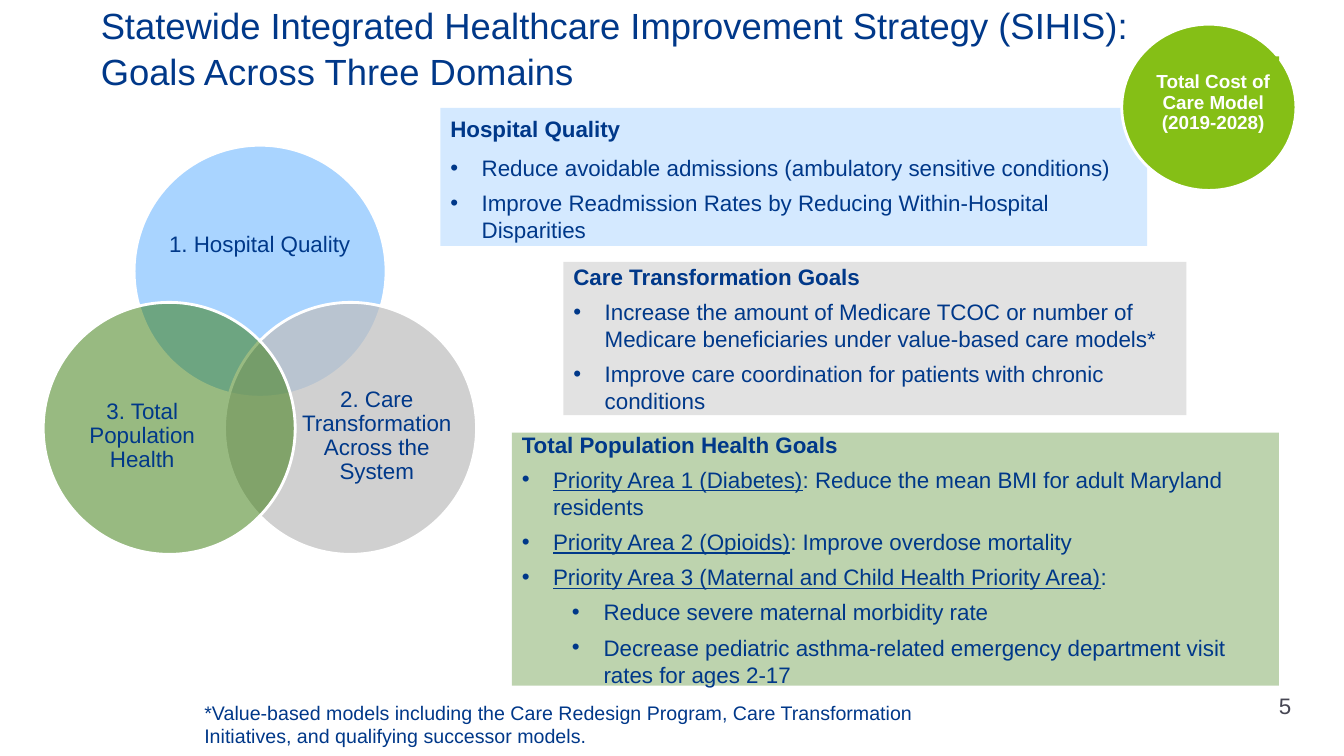
from lxml.etree import SubElement
from pptx import Presentation
from pptx.dml.color import RGBColor
from pptx.enum.shapes import MSO_SHAPE as Shape
from pptx.enum.text import MSO_ANCHOR as Anchor, PP_ALIGN as Align
from pptx.oxml.ns import qn
from pptx.util import Cm, Pt

COLORS = {"navy": "003889", "slate": "464653", "white": "FFFFFF", "blue": "55AAFF",
          "gray": "BFBFBF", "green": "337705", "lime": "85BF16"}

# Boxes are left, top, width, height in centimetres
TITLE = ["Statewide Integrated Healthcare Improvement Strategy (SIHIS):",
         "Goals Across Three Domains"]
TITLE_BOX = (2.29, -0.1, 29.21, 2.36)
FOOTNOTE = ("*Value-based models including the Care Redesign Program, "
            "Care Transformation Initiatives, and qualifying successor models.")
FOOTNOTE_BOX = (4.9, 17.53, 19.33, 1.45)
PAGE_NUMBER, PAGE_NUMBER_BOX = "5", (31.98, 17.27, 1.6, 1.02)
BADGE = "Total Cost of Care Model (2019-2028)"
BADGE_CIRCLE, BADGE_BOX = (28.27, 0.61, 4.39, 4.19), (28.91, 1.42, 3.33, 2.36)

DIAMETER = 6.35
# Label, circle left and top, label box, colour, opacity in percent
DOMAINS = [
    ("1. Hospital Quality", (3.38, 3.66), (4.22, 4.75, 4.65, 2.84), "blue", 50),
    ("2. Care Transformation Across the System", (5.66, 7.62),
     (7.59, 9.25, 3.81, 3.48), "gray", 73),
    ("3. Total Population Health", (1.09, 7.62), (1.68, 9.25, 3.81, 3.48), "green", 50),
]

# Heading, box, colour, opacity, widely spaced lines, goals (level, underlined, plain)
PANELS = [
    ("Hospital Quality", (11.1, 2.72, 17.81, 3.48), "blue", 25, 2, [
        (0, "", "Reduce avoidable admissions (ambulatory sensitive conditions)"),
        (0, "", "Improve Readmission Rates by Reducing Within-Hospital Disparities")]),
    ("Care Transformation Goals", (14.2, 6.6, 15.7, 3.86), "gray", 45, 0, [
        (0, "", "Increase the amount of Medicare TCOC or number of Medicare "
                "beneficiaries under value-based care models*"),
        (0, "", "Improve care coordination for patients with chronic conditions")]),
    ("Total Population Health Goals", (12.9, 10.9, 19.33, 6.38), "green", 32, 0, [
        (0, "Priority Area 1 (Diabetes)",
         ": Reduce the mean BMI for adult Maryland residents"),
        (0, "Priority Area 2 (Opioids)", ": Improve overdose mortality"),
        (0, "Priority Area 3 (Maternal and Child Health Priority Area)", ":"),
        (1, "", "Reduce severe maternal morbidity rate"),
        (1, "", "Decrease pediatric asthma-related emergency department visit "
                "rates for ages 2-17")]),
]
INDENTS, HANGING = (0.79, 2.06), 0.8


def rgb(name):
    return RGBColor.from_string(COLORS[name])


def style(font, size, color="navy", bold=False):
    font.name, font.size, font.bold = "Arial", Pt(size), bold
    font.color.rgb = rgb(color)


def add_filled(slide, kind, box, color, opacity=100, outlined=False):
    shape = slide.shapes.add_shape(kind, *map(Cm, box))
    shape.shadow.inherit = False
    shape.fill.solid()
    shape.fill.fore_color.rgb = rgb(color)
    if opacity < 100:
        color_node = shape.fill._xPr.find(qn("a:solidFill"))[0]
        SubElement(color_node, qn("a:alpha"), val=str(opacity * 1000))
    if outlined:
        shape.line.color.rgb = rgb("white")
        shape.line.width = Pt(2)
    else:
        shape.line.fill.background()
    return shape


def set_frame(frame, anchor=Anchor.TOP, inset=None):
    frame.word_wrap = True
    frame.vertical_anchor = anchor
    if inset is not None:
        frame.margin_left = frame.margin_right = Cm(inset)
        frame.margin_top = frame.margin_bottom = Cm(inset)


def write(frame, lines, size, color="navy", bold=False, align=Align.LEFT, spacing=None):
    frame.text = "\n".join(lines)
    for para in frame.paragraphs:
        para.alignment = align
        para.line_spacing = spacing
        for span in para.runs:
            style(span.font, size, color, bold)


def add_text(slide, box, lines, size, anchor=Anchor.TOP, inset=None, **options):
    frame = slide.shapes.add_textbox(*map(Cm, box)).text_frame
    set_frame(frame, anchor, inset)
    write(frame, lines, size, **options)


def add_bullet(para, level):
    para.level = level
    props = para._p.get_or_add_pPr()
    props.set("marL", str(Cm(INDENTS[level])))
    props.set("indent", str(-Cm(min(HANGING, INDENTS[level]))))
    bullet_color = SubElement(props, qn("a:buClr"))
    SubElement(bullet_color, qn("a:srgbClr"), val=COLORS["navy"])
    SubElement(props, qn("a:buFont"), typeface="Arial")
    SubElement(props, qn("a:buChar"), char="•")


def add_panel(slide, heading, box, color, opacity, wide_lines, goals):
    frame = add_filled(slide, Shape.RECTANGLE, box, color, opacity).text_frame
    set_frame(frame, Anchor.MIDDLE)
    write(frame, [heading], 16, bold=True)
    for level, underlined, plain in goals:
        para = frame.add_paragraph()
        para.alignment = Align.LEFT
        para.space_before = Pt(6)
        add_bullet(para, level)
        for text in filter(None, (underlined, plain)):
            span = para.add_run()
            span.text = text
            style(span.font, 16)
            span.font.underline = text == underlined
    for para in frame.paragraphs[:wide_lines]:
        para.line_spacing = 1.15


def main():
    deck = Presentation()
    deck.slide_width, deck.slide_height = Cm(33.87), Cm(19.05)
    slide = deck.slides.add_slide(deck.slide_layouts[6])

    add_text(slide, PAGE_NUMBER_BOX, [PAGE_NUMBER], 16, Anchor.MIDDLE, color="slate")
    add_text(slide, TITLE_BOX, TITLE, 26, spacing=1.05)
    for label, corner, label_box, color, opacity in DOMAINS:
        circle = (*corner, DIAMETER, DIAMETER)
        add_filled(slide, Shape.OVAL, circle, color, opacity, outlined=True)
        add_text(slide, label_box, [label], 16, Anchor.MIDDLE, 0,
                 align=Align.CENTER, spacing=0.9)
    for panel in PANELS:
        add_panel(slide, *panel)

    add_filled(slide, Shape.OVAL, BADGE_CIRCLE, "lime", outlined=True)
    badge = add_filled(slide, Shape.RECTANGLE, BADGE_BOX, "lime").text_frame
    set_frame(badge, Anchor.MIDDLE, 0.05)
    write(badge, [BADGE], 13.5, "white", True, Align.CENTER, 0.9)
    add_text(slide, FOOTNOTE_BOX, [FOOTNOTE], 14)
    deck.save("out.pptx")


if __name__ == "__main__":
    main()
